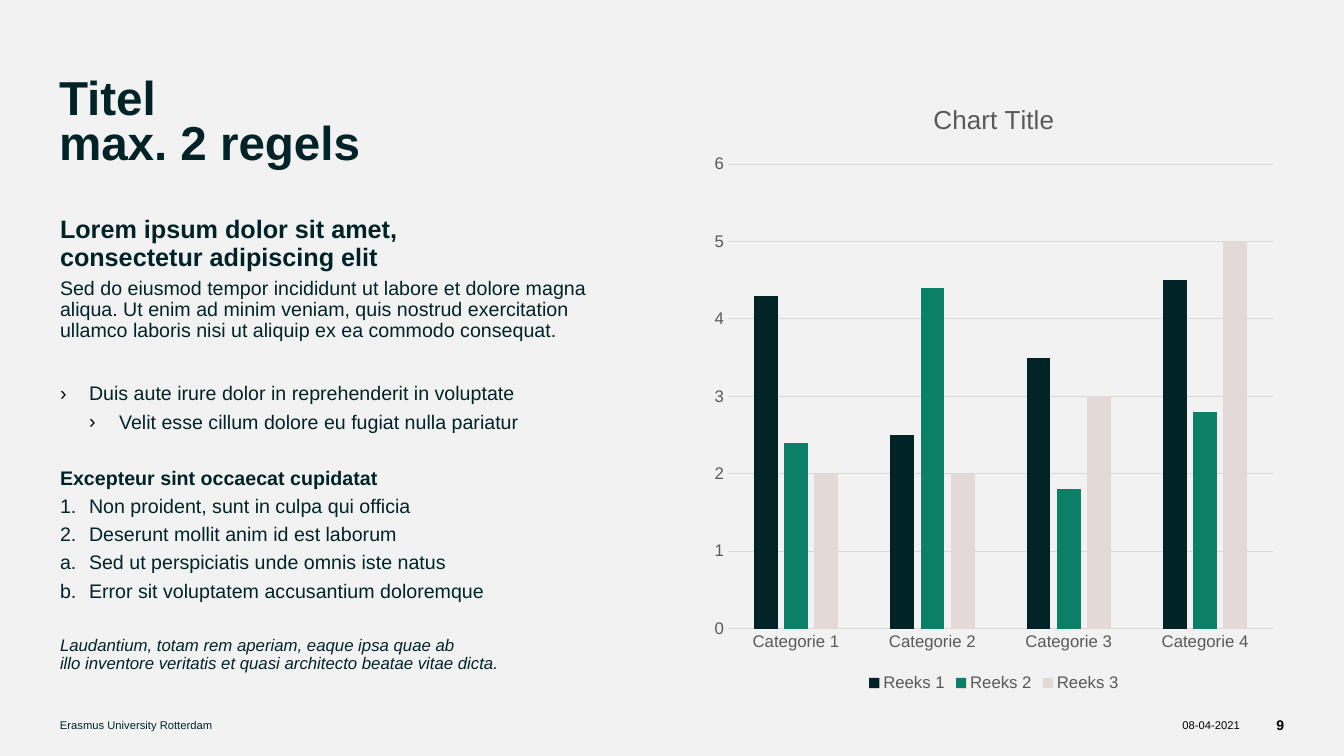
from lxml.etree import SubElement
from pptx import Presentation
from pptx.chart.data import CategoryChartData
from pptx.dml.color import RGBColor
from pptx.enum.chart import XL_CHART_TYPE as ChartType
from pptx.enum.chart import XL_LEGEND_POSITION as LegendPos
from pptx.enum.chart import XL_TICK_MARK as Tick
from pptx.enum.text import MSO_ANCHOR as Anchor
from pptx.enum.text import MSO_AUTO_SIZE as AutoSize
from pptx.enum.text import PP_ALIGN as Align
from pptx.oxml.ns import qn
from pptx.util import Emu, Pt

FONT = "Arial"
INK, BLACK, GREY, RULE = "002328", "000000", "595959", "D9D9D9"

# text, level, size, style, space before, left indent, hanging indent, marker
BODY = [
    ("Lorem ipsum dolor sit amet,\nconsectetur adipiscing elit", 4, 18, "b", 0, 0, 0, None),
    ("Sed do eiusmod tempor incididunt ut labore et dolore magna aliqua. "
     "Ut enim ad minim veniam, quis nostrud exercitation\n"
     "ullamco laboris nisi ut aliquip ex ea commodo consequat.", 2, 14, "", 5, 0, 0, None),
    ("Duis aute irure dolor in reprehenderit in voluptate", 0, 14, "", 30, 29, 29, "›"),
    ("Velit esse cillum dolore eu fugiat nulla pariatur", 1, 14, "", 5, 59, 30, "›"),
    ("Excepteur sint occaecat cupidatat", 5, 14, "b", 25, 0, 0, None),
    ("Non proident, sunt in culpa qui officia", 6, 14, "", 5, 29, 29, "arabicPeriod"),
    ("Deserunt mollit anim id est laborum", 6, 14, "", 5, 29, 29, "arabicPeriod"),
    ("Sed ut perspiciatis unde omnis iste natus", 7, 14, "", 5, 29, 29, "alphaLcPeriod"),
    ("Error sit voluptatem accusantium doloremque", 7, 14, "", 5, 29, 29, "alphaLcPeriod"),
    ("Laudantium, totam rem aperiam, eaque ipsa quae ab\n"
     "illo inventore veritatis et quasi architecto beatae vitae dicta.", 8, 12, "i", 25, 0, 0, None),
]
CATEGORIES = [f"Categorie {n}" for n in range(1, 5)]
SERIES = [
    ("Reeks 1", (4.3, 2.5, 3.5, 4.5), INK),
    ("Reeks 2", (2.4, 4.4, 1.8, 2.8), "0C8066"),
    ("Reeks 3", (2, 2, 3, 5), "E3DAD8"),
]


def px(n):
    """Turn pixels into EMU at 100.8 pixels to the inch."""
    return Emu(round(n * 914400 / 100.8))


def rgb(value):
    return RGBColor.from_string(value)


def style_font(font, size, color, style=""):
    font.name, font.size = FONT, Pt(size)
    font.bold, font.italic = "b" in style, "i" in style
    font.color.rgb = rgb(color)


def style_line(line):
    line.color.rgb = rgb(RULE)
    line.width = Pt(0.75)


def set_marker(p, left, hang, marker):
    """Set the indents and the bullet character, number scheme or no marker."""
    pPr = p._p.get_or_add_pPr()
    pPr.set("marL", str(px(left)))
    pPr.set("indent", str(-px(hang)))
    if marker is None:
        SubElement(pPr, qn("a:buNone"))
    elif marker == "›":
        color = SubElement(pPr, qn("a:buClr"))
        SubElement(color, qn("a:srgbClr"), val=BLACK)
        SubElement(pPr, qn("a:buFont"), typeface=FONT)
        SubElement(pPr, qn("a:buChar"), char=marker)
    else:
        SubElement(pPr, qn("a:buFont"), typeface=FONT)
        SubElement(pPr, qn("a:buAutoNum"), type=marker)


class SlideBuilder:
    def __init__(self, prs, background):
        self.slide = prs.slides.add_slide(prs.slide_layouts[1])
        self.slide.background.fill.solid()
        self.slide.background.fill.fore_color.rgb = rgb(background)

    def frame(self, s, box, anchor):
        s.left, s.top, s.width, s.height = map(px, box)
        tf = s.text_frame
        tf.margin_left = tf.margin_top = tf.margin_right = tf.margin_bottom = 0
        tf.word_wrap, tf.auto_size = True, AutoSize.NONE
        tf.vertical_anchor = anchor
        return tf

    def add_text(self, p, text, size, color, style=""):
        for i, line in enumerate(text.split("\n")):
            if i:
                p.add_line_break()
            r = p.add_run()
            r.text = line
            style_font(r.font, size, color, style)

    def title(self, text, box):
        p = self.frame(self.slide.shapes.title, box, Anchor.TOP).paragraphs[0]
        p.alignment = Align.LEFT
        p.line_spacing = Pt(32)
        self.add_text(p, text, 34, INK, "b")

    def body(self, items, box):
        tf = self.frame(self.slide.placeholders[1], box, Anchor.TOP)
        for i, (text, level, size, style, before, left, hang, marker) in enumerate(items):
            p = tf.add_paragraph() if i else tf.paragraphs[0]
            set_marker(p, left, hang, marker)
            p.level, p.alignment = level, Align.LEFT
            p.line_spacing, p.space_before = 0.9, Pt(before)
            self.add_text(p, text, size, INK, style)

    def label(self, text, box, size, color, align, style=""):
        s = self.slide.shapes.add_textbox(*map(px, box))
        p = self.frame(s, box, Anchor.MIDDLE).paragraphs[0]
        p.alignment = align
        self.add_text(p, text, size, color, style)

    def column_chart(self, title, categories, series, box):
        data = CategoryChartData()
        data.categories = categories
        for name, values, _ in series:
            data.add_series(name, values)
        chart = self.slide.shapes.add_chart(
            ChartType.COLUMN_CLUSTERED, *map(px, box), data).chart
        style_font(chart.font, 10, BLACK)
        chart.has_title = True
        p = chart.chart_title.text_frame.paragraphs[0]
        r = p.add_run()
        r.text = title
        style_font(r.font, 18.6, GREY)

        chart.has_legend = True
        chart.legend.position = LegendPos.BOTTOM
        chart.legend.include_in_layout = False
        style_font(chart.legend.font, 12, GREY)

        cat, val = chart.category_axis, chart.value_axis
        for axis in (cat, val):
            axis.major_tick_mark = axis.minor_tick_mark = Tick.NONE
            style_font(axis.tick_labels.font, 12, GREY)
        style_line(cat.format.line)
        val.format.line.fill.background()
        val.minimum_scale, val.maximum_scale, val.major_unit = 0, 6, 1
        style_line(val.major_gridlines.format.line)

        plot = chart.plots[0]
        plot.gap_width, plot.overlap, plot.vary_by_categories = 219, -27, False
        for bars, (_, _, color) in zip(plot.series, series):
            bars.invert_if_negative = False
            bars.format.fill.solid()
            bars.format.fill.fore_color.rgb = rgb(color)


def main():
    prs = Presentation()
    prs.slide_width, prs.slide_height = px(1344), px(756)
    s = SlideBuilder(prs, "F2F2F2")
    s.title("Titel\nmax. 2 regels", (59, 80, 582, 79))
    s.body(BODY, (60, 217, 582, 479))
    s.label("Erasmus University Rotterdam", (60, 718, 1088, 14), 8, INK, Align.LEFT)
    s.label("08-04-2021", (1163, 718, 77, 14), 8, BLACK, Align.RIGHT)
    s.label("9", (1255, 718, 29, 14), 10, BLACK, Align.RIGHT, "b")
    s.column_chart("Chart Title", CATEGORIES, SERIES, (703, 80, 582, 616))
    prs.save("out.pptx")


if __name__ == "__main__":
    main()
